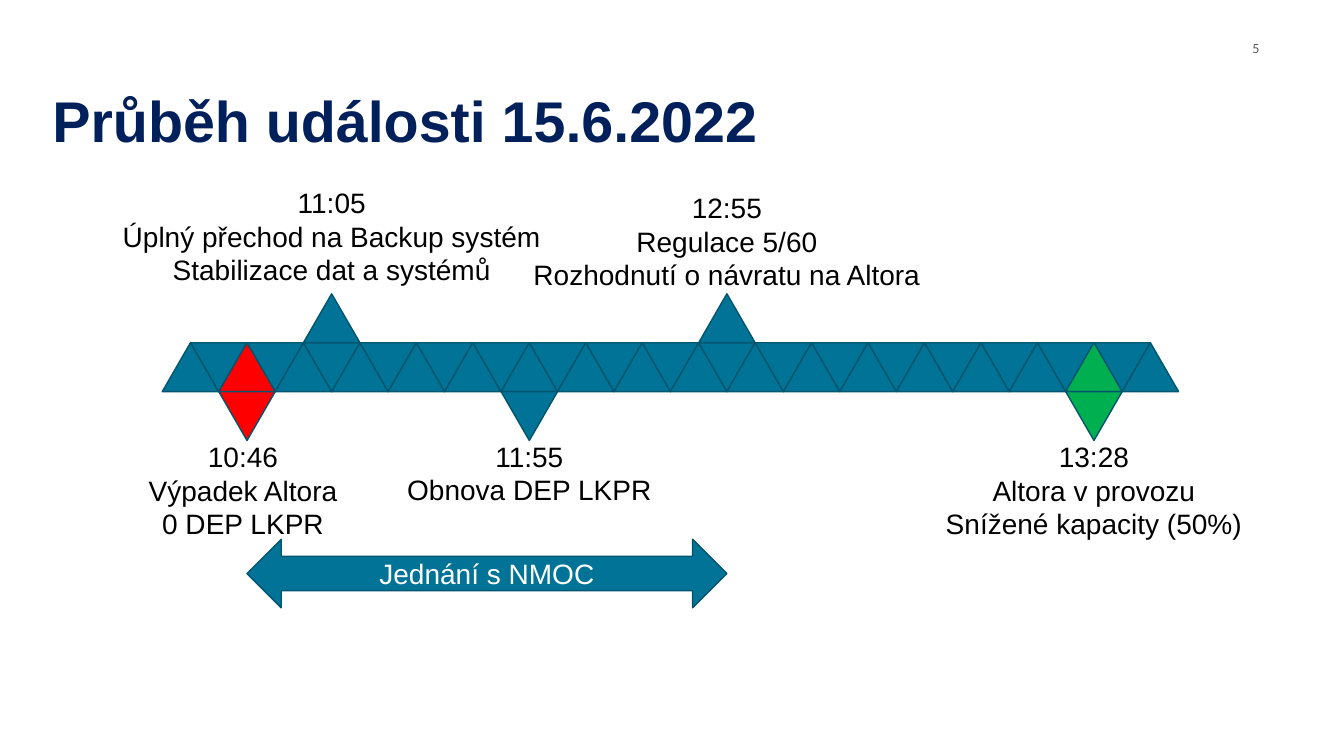
from pptx import Presentation
from pptx.dml.color import RGBColor
from pptx.enum.shapes import MSO_SHAPE
from pptx.enum.text import MSO_ANCHOR, MSO_AUTO_SIZE, PP_ALIGN
from pptx.util import Inches, Pt

TRIANGLE, SPAN_ARROW = MSO_SHAPE.ISOSCELES_TRIANGLE, MSO_SHAPE.LEFT_RIGHT_ARROW
TOP, MIDDLE = MSO_ANCHOR.TOP, MSO_ANCHOR.MIDDLE
LEFT, CENTER = PP_ALIGN.LEFT, PP_ALIGN.CENTER
FIXED = MSO_AUTO_SIZE.NONE

HEADING = "Průběh události 15.6.2022"
PAGE = "5"
SLOTS = 35
EVENTS = [
    {"slot": 5, "above": True, "color": "teal", "width": 4.38, "top": 1.79, "shift": 0,
     "lines": ["11:05", "Úplný přechod na Backup systém", "Stabilizace dat a systémů"]},
    {"slot": 19, "above": True, "color": "teal", "width": 4.26, "top": 1.84, "shift": 0,
     "lines": ["12:55", "Regulace 5/60", "Rozhodnutí o návratu na Altora"]},
    {"slot": 2, "above": False, "color": "red", "width": 2.29, "top": 4.31, "shift": -0.04,
     "lines": ["10:46", "Výpadek Altora", "0 DEP LKPR"]},
    {"slot": 12, "above": False, "color": "teal", "width": 2.65, "top": 4.31, "shift": 0,
     "lines": ["11:55", "Obnova DEP LKPR"]},
    {"slot": 32, "above": False, "color": "green", "width": 3.16, "top": 4.31, "shift": 0,
     "lines": ["13:28", "Altora v provozu", "Snížené kapacity (50%)"]},
]
NEGOTIATION = {"from": 2, "to": 19, "text": "Jednání s NMOC"}

THEME = {
    "teal": "007396", "edge": "00556F", "red": "FF0000", "green": "00B050",
    "heading": {"name": "Arial", "size": Pt(41), "bold": True, "color": "00205B"},
    "label": {"name": "Arial", "size": Pt(20), "color": "000000"},
    "arrow": {"name": "Arial", "size": Pt(20), "color": "FFFFFF"},
    "page": {"name": "Calibri", "size": Pt(10), "color": "5A5A5A"},
}

ROW_LEFT, ROW_TOP = 1.61, 3.4
STEP, ROW_HEIGHT = 0.28, 0.485
LINE_HEIGHT, LABEL_PADDING = 0.335, 0.1


def box(left, top, width, height):
    return [Inches(value) for value in (left, top, width, height)]


def slot_center(slot):
    return ROW_LEFT + (slot + 1) * STEP


def write(frame, lines, style, align, **settings):
    for key, value in settings.items():
        setattr(frame, key, value)
    for index, line in enumerate(lines):
        paragraph = frame.paragraphs[0] if index == 0 else frame.add_paragraph()
        paragraph.text = line
        paragraph.alignment = align
        for key, value in THEME[style].items():
            if key == "color":
                paragraph.font.color.rgb = RGBColor.from_string(value)
            else:
                setattr(paragraph.font, key, value)


def add_figure(slide, kind, place, color):
    figure = slide.shapes.add_shape(kind, *box(*place))
    figure.shadow.inherit = False
    figure.fill.solid()
    figure.fill.fore_color.rgb = RGBColor.from_string(THEME[color])
    figure.line.color.rgb = RGBColor.from_string(THEME["edge"])
    figure.line.width = Pt(1)
    return figure


def add_triangle(slide, slot, row, color, inverted):
    place = (ROW_LEFT + slot * STEP, ROW_TOP + row * ROW_HEIGHT, 2 * STEP, ROW_HEIGHT)
    triangle = add_figure(slide, TRIANGLE, place, color)
    triangle.rotation = 180 if inverted else 0


def add_timeline(slide):
    colors = {event["slot"]: event["color"] for event in EVENTS}
    for slot in sorted(range(SLOTS), key=lambda slot: colors.get(slot, "teal") != "teal"):
        add_triangle(slide, slot, 0, colors.get(slot, "teal"), slot % 2 == 1)


def add_event(slide, event):
    above = event["above"]
    add_triangle(slide, event["slot"], -1 if above else 1, event["color"], not above)
    left = slot_center(event["slot"]) + event["shift"] - event["width"] / 2
    height = len(event["lines"]) * LINE_HEIGHT + LABEL_PADDING
    label = slide.shapes.add_textbox(*box(left, event["top"], event["width"], height))
    write(label.text_frame, event["lines"], "label", CENTER, word_wrap=False)


def main():
    deck = Presentation()
    deck.slide_width, deck.slide_height = Inches(13.33), Inches(7.5)
    slide = deck.slides.add_slide(deck.slide_layouts[5])

    heading = slide.shapes.title
    heading.left, heading.top, heading.width, heading.height = box(0.42, 0.87, 12.55, 1.36)
    write(heading.text_frame, [HEADING], "heading", LEFT,
          vertical_anchor=TOP, word_wrap=True, auto_size=FIXED)
    heading.text_frame.paragraphs[0].line_spacing = 0.9

    page = slide.shapes.add_textbox(*box(12.42, 0.34, 0.85, 0.27))
    write(page.text_frame, [PAGE], "page", LEFT,
          word_wrap=True, margin_left=0, margin_right=0)

    add_timeline(slide)
    for event in EVENTS:
        add_event(slide, event)

    start, end = slot_center(NEGOTIATION["from"]), slot_center(NEGOTIATION["to"])
    arrow = add_figure(slide, SPAN_ARROW, (start, 5.35, end - start, 0.68), "teal")
    write(arrow.text_frame, [NEGOTIATION["text"]], "arrow", CENTER,
          vertical_anchor=MIDDLE, word_wrap=True)

    deck.save("out.pptx")


if __name__ == "__main__":
    main()
